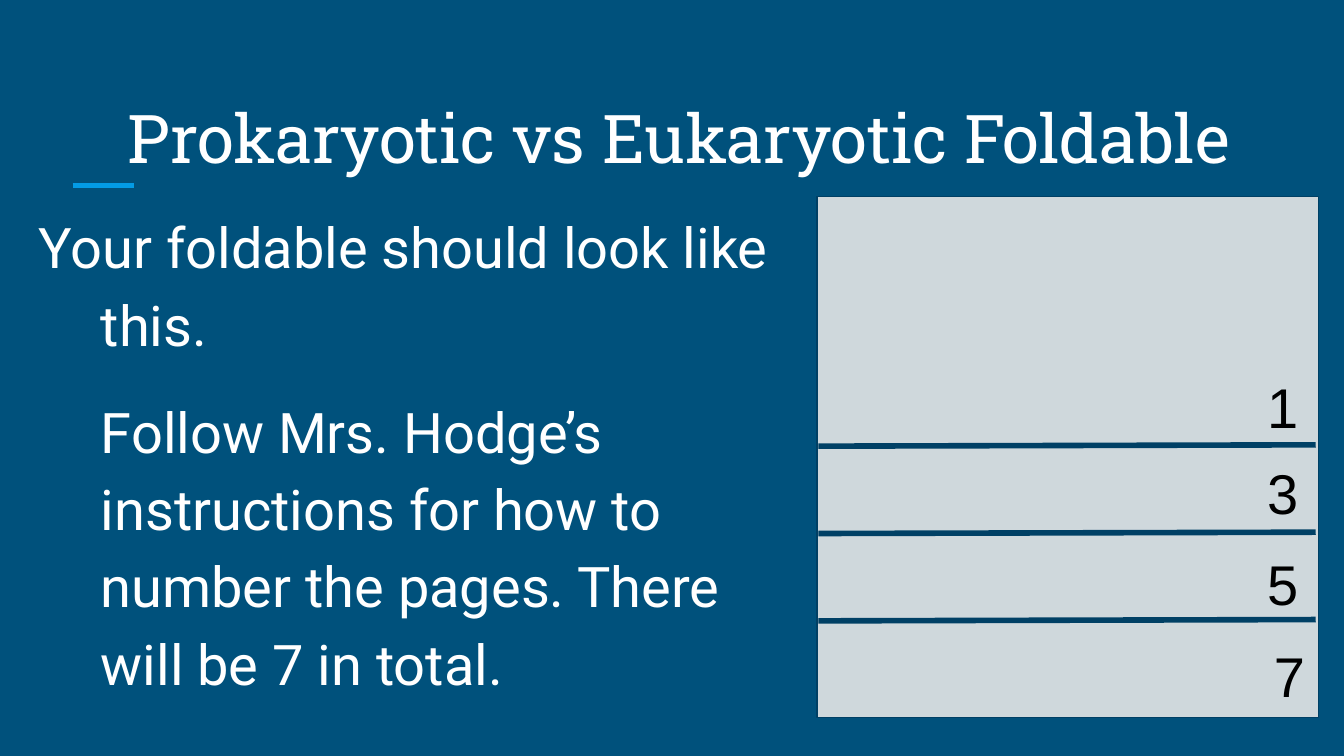
import pptx
import pptx.util
import pptx.dml.color
import pptx.enum.shapes
import pptx.enum.text
import lxml.etree

NAVY = pptx.dml.color.RGBColor(0x00, 0x51, 0x7C)
DARK_NAVY = pptx.dml.color.RGBColor(0x00, 0x40, 0x65)
SKY = pptx.dml.color.RGBColor(0x03, 0x9B, 0xE5)
PAPER = pptx.dml.color.RGBColor(0xCF, 0xD8, 0xDC)
WHITE = pptx.dml.color.RGBColor(0xFF, 0xFF, 0xFF)
BLACK = pptx.dml.color.RGBColor(0x00, 0x00, 0x00)

GRID_COLUMNS = 100
GRID_ROWS = 56.25
CELL = pptx.util.Inches(0.1)

TITLE = "Prokaryotic vs Eukaryotic Foldable"
INSTRUCTIONS = [
    ("Your foldable should look like this.", -4.6),
    ("Follow Mrs. Hodge’s instructions for how to number the pages. "
     "There will be 7 in total.", 0),
]
PAGE_NUMBERS = [("1", 93.3, 26.7), ("3", 93.3, 33.1), ("5", 93.3, 39.9), ("7", 93.8, 46.7)]
FIRST_FOLD = 33.2
FOLD_GAP = 6.5
FOLD_COUNT = 3

FRAME = {
    "word_wrap": True,
    "auto_size": pptx.enum.text.MSO_AUTO_SIZE.NONE,
    "vertical_anchor": pptx.enum.text.MSO_ANCHOR.TOP,
    "margin_left": CELL,
    "margin_right": CELL,
    "margin_top": CELL,
    "margin_bottom": CELL,
}
TITLE_FRAME = {**FRAME, "vertical_anchor": pptx.enum.text.MSO_ANCHOR.BOTTOM}
TITLE_PARAGRAPH = {"alignment": pptx.enum.text.PP_ALIGN.CENTER}
BODY_PARAGRAPH = {
    "alignment": pptx.enum.text.PP_ALIGN.LEFT,
    "line_spacing": 1.15,
    "space_before": pptx.util.Pt(0),
    "space_after": pptx.util.Pt(16),
}
TITLE_FONT = {"name": "Roboto Slab", "size": pptx.util.Pt(36)}
BODY_FONT = {"name": "Roboto", "size": pptx.util.Pt(30)}
NUMBER_FONT = {"name": "Arial", "size": pptx.util.Pt(30)}


def grid(*cells):
    return [round(cell * CELL) for cell in cells]


def apply(target, values):
    for name, value in values.items():
        setattr(target, name, value)


def place(holder, *cells):
    apply(holder, dict(zip(("left", "top", "width", "height"), grid(*cells))))


def write(paragraph, text, font, color):
    run = paragraph.add_run()
    run.text = text
    apply(run.font, font)
    run.font.color.rgb = color


def indent(paragraph, first_line):
    properties = paragraph._p.get_or_add_pPr()
    margin, offset = grid(5, first_line)
    properties.set("marL", str(margin))
    properties.set("indent", str(offset))
    lxml.etree.SubElement(properties, pptx.oxml.ns.qn("a:buNone"))


def add_title(slide):
    title = slide.shapes.title
    place(title, 4.8, 1, 91.5, 13.2)
    apply(title.text_frame, TITLE_FRAME)
    heading = title.text_frame.paragraphs[0]
    apply(heading, TITLE_PARAGRAPH)
    write(heading, TITLE, TITLE_FONT, WHITE)


def add_instructions(slide):
    body = slide.placeholders[1]
    place(body, 1.5, 14.1, 58.1, 33.7)
    frame = body.text_frame
    apply(frame, FRAME)
    for index, (text, first_line) in enumerate(INSTRUCTIONS):
        instruction = frame.add_paragraph() if index else frame.paragraphs[0]
        apply(instruction, BODY_PARAGRAPH)
        indent(instruction, first_line)
        write(instruction, text, BODY_FONT, WHITE)


def add_rule(slide, start, end, color):
    rule = slide.shapes.add_connector(
        pptx.enum.shapes.MSO_CONNECTOR.STRAIGHT, *grid(*start, *end))
    rule.line.color.rgb = color
    rule.line.width = pptx.util.Pt(3)
    lxml.etree.SubElement(rule._element.spPr, pptx.oxml.ns.qn("a:effectLst"))


def add_sheet(slide):
    sheet = slide.shapes.add_shape(
        pptx.enum.shapes.MSO_SHAPE.RECTANGLE, *grid(60.8, 14.6, 37.3, 38.8))
    sheet.shadow.inherit = False
    sheet.fill.solid()
    sheet.fill.fore_color.rgb = PAPER
    sheet.line.color.rgb = DARK_NAVY
    sheet.line.width = pptx.util.Pt(0.75)


def add_page_number(slide, number, left, top):
    label = slide.shapes.add_textbox(*grid(left, top, 3.6, 5.9))
    apply(label.text_frame, FRAME)
    write(label.text_frame.paragraphs[0], number, NUMBER_FONT, BLACK)


def main():
    deck = pptx.Presentation()
    deck.slide_width, deck.slide_height = grid(GRID_COLUMNS, GRID_ROWS)
    slide = deck.slides.add_slide(deck.slide_layouts[1])
    slide.background.fill.solid()
    slide.background.fill.fore_color.rgb = NAVY

    add_rule(slide, (5.4, 13.8), (10, 13.8), SKY)
    add_title(slide)
    add_instructions(slide)
    add_sheet(slide)
    for fold in range(FOLD_COUNT):
        fold_top = FIRST_FOLD + fold * FOLD_GAP
        add_rule(slide, (60.9, fold_top), (97.9, fold_top - 0.1), DARK_NAVY)
    for number, left, top in PAGE_NUMBERS:
        add_page_number(slide, number, left, top)
    deck.save("out.pptx")


if __name__ == "__main__":
    main()
